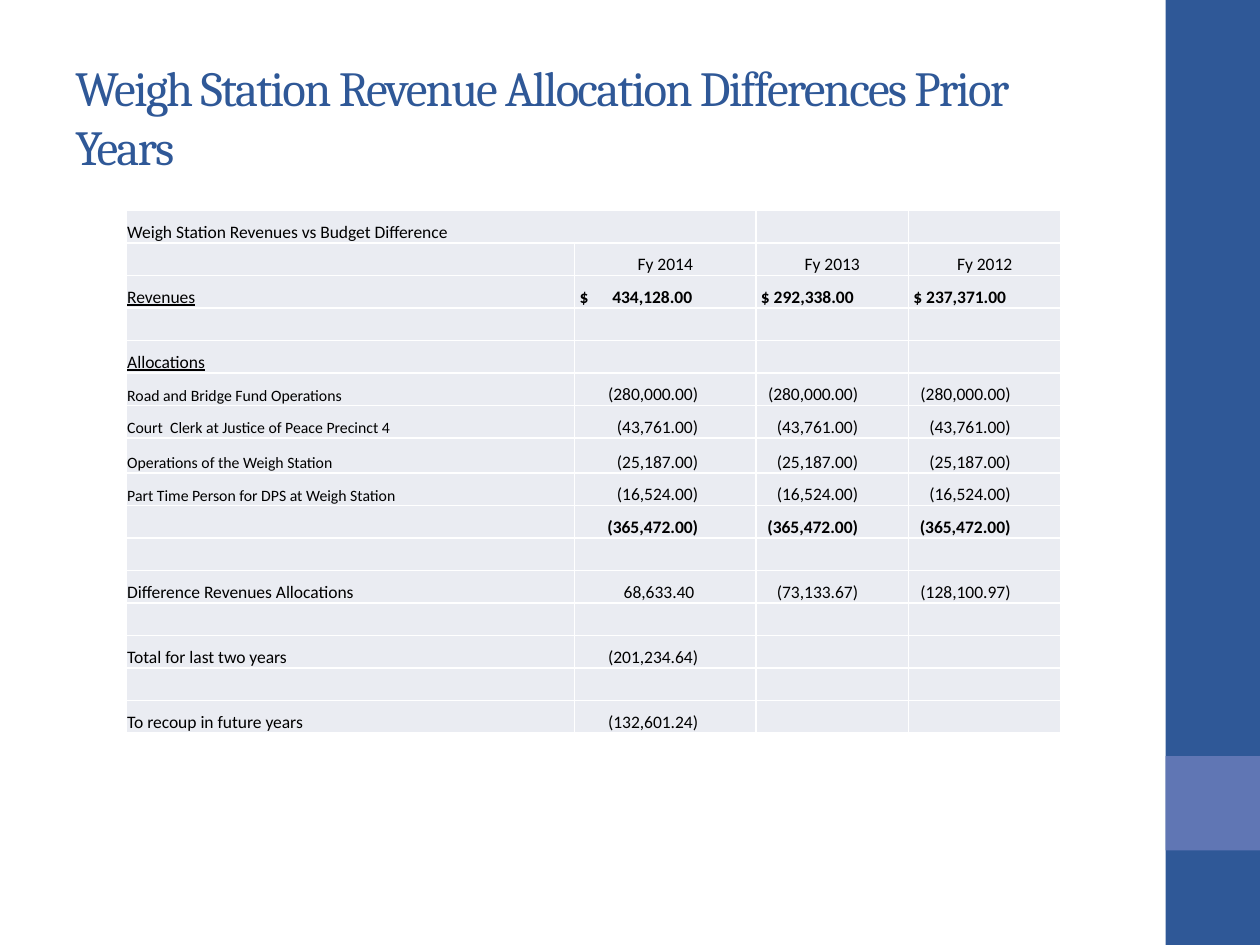
from pptx import Presentation
from pptx.dml.color import RGBColor
from pptx.enum.shapes import MSO_SHAPE
from pptx.enum.text import MSO_ANCHOR, PP_ALIGN
from pptx.oxml.ns import qn
from pptx.util import Inches, Pt
from lxml.etree import SubElement

NAVY = RGBColor(0x2F, 0x58, 0x97)
PERIWINKLE = RGBColor(0x60, 0x76, 0xB4)
PALE = RGBColor(0xEA, 0xEC, 0xF2)
BLACK = RGBColor(0, 0, 0)

TITLE = "Weigh Station Revenue Allocation Differences Prior Years"
COLUMN_WIDTHS = [3.56, 1.44, 1.21, 1.21]
AMOUNT_MARGINS = [0.01, 0.46, 0.4, 0.4]
TALL_ROW = 7
TALL_HEIGHT = 0.28
PLAIN = {"name": "Calibri", "size": Pt(10), "bold": False, "underline": False}
BOLD = {**PLAIN, "bold": True}
UNDERLINED = {**PLAIN, "underline": True}
SMALL = {**PLAIN, "size": Pt(9)}

ROWS = [
    (PLAIN, PLAIN, ["Weigh Station Revenues vs Budget Difference"]),
    (PLAIN, PLAIN, ["", "Fy 2014", "Fy 2013", "Fy 2012"]),
    (UNDERLINED, BOLD, ["Revenues", "$\t434,128.00", "$ 292,338.00", "$ 237,371.00"]),
    (PLAIN, PLAIN, []),
    (UNDERLINED, PLAIN, ["Allocations"]),
    (SMALL, PLAIN, ["Road and Bridge Fund Operations"] + ["(280,000.00)"] * 3),
    (SMALL, PLAIN, ["Court  Clerk at Justice of Peace Precinct 4"] + ["(43,761.00)"] * 3),
    (SMALL, PLAIN, ["Operations of the Weigh Station"] + ["(25,187.00)"] * 3),
    (SMALL, PLAIN, ["Part Time Person for DPS at Weigh Station"] + ["(16,524.00)"] * 3),
    (PLAIN, BOLD, [""] + ["(365,472.00)"] * 3),
    (PLAIN, PLAIN, []),
    (PLAIN, PLAIN, ["Difference Revenues Allocations", "68,633.40", "(73,133.67)", "(128,100.97)"]),
    (PLAIN, PLAIN, []),
    (PLAIN, PLAIN, ["Total for last two years", "(201,234.64)"]),
    (PLAIN, PLAIN, []),
    (PLAIN, PLAIN, ["To recoup in future years", "(132,601.24)"]),
]


def set_values(target, values):
    """Set each named attribute of the target."""
    for name, value in values.items():
        setattr(target, name, value)


def add_sidebar(slide, left, top, width, height):
    """Draw the side band with a square one width above its foot."""
    bands = [(top, height, NAVY), (top + height - 2 * width, width, PERIWINKLE)]
    for band_top, band_height, color in bands:
        shape = slide.shapes.add_shape(MSO_SHAPE.RECTANGLE, left, band_top, width, band_height)
        shape.shadow.inherit = False
        shape.fill.solid()
        shape.fill.fore_color.rgb = color
        shape.line.fill.background()


def add_title(slide, left, top, width, height):
    """Place the slide title in its box."""
    frame = slide.shapes.add_textbox(left, top, width, height).text_frame
    set_values(frame, {"word_wrap": True, "vertical_anchor": MSO_ANCHOR.MIDDLE})
    run = frame.paragraphs[0].add_run()
    run.text = TITLE
    set_values(run.font, {"name": "Cambria", "size": Pt(28)})
    run.font.color.rgb = NAVY
    run.font._element.set("spc", "-100")


def add_borders(cell):
    """Give a cell thin white borders on every side."""
    properties = cell._tc.get_or_add_tcPr()
    for side in ("a:lnL", "a:lnR", "a:lnT", "a:lnB"):
        line = SubElement(properties, qn(side), w=str(Pt(1)))
        fill = SubElement(line, qn("a:solidFill"))
        SubElement(fill, qn("a:srgbClr"), val="FFFFFF")


def place_text(cell, text, column):
    """Align the cell text by its kind: label, year, dollar total or amount."""
    paragraph = cell.text_frame.paragraphs[0]
    if text.startswith("Fy"):
        paragraph.alignment = PP_ALIGN.CENTER
    elif text.startswith("$"):
        cell.margin_left = Inches(0.04)
        tabs = SubElement(paragraph._p.get_or_add_pPr(), qn("a:tabLst"))
        SubElement(tabs, qn("a:tab"), pos=str(Inches(0.26)), algn="l")
    elif column and text:
        paragraph.alignment = PP_ALIGN.RIGHT
        parenthesis_room = 0 if text.endswith(")") else 0.03
        cell.margin_right = Inches(AMOUNT_MARGINS[column] + parenthesis_room)


def fill_cell(cell, text, column, font_values):
    """Format one cell and write its text."""
    add_borders(cell)
    cell.fill.solid()
    cell.fill.fore_color.rgb = PALE
    set_values(cell, {
        "margin_left": Inches(0.01), "margin_right": Inches(0.01),
        "margin_top": Inches(0.01), "margin_bottom": 0,
        "vertical_anchor": MSO_ANCHOR.BOTTOM,
    })
    place_text(cell, text, column)
    paragraph = cell.text_frame.paragraphs[0]
    if text:
        run = paragraph.add_run()
        run.text = text
        set_values(run.font, font_values)
        run.font.color.rgb = BLACK
    else:
        SubElement(paragraph._p, qn("a:endParaRPr"), sz="1000")


def add_revenue_table(slide, left, top, width, height):
    """Build the table of revenues and allocations by year."""
    table = slide.shapes.add_table(len(ROWS), len(COLUMN_WIDTHS), left, top, width, height).table
    set_values(table, {"first_row": False, "horz_banding": False})
    for column, column_width in zip(table.columns, COLUMN_WIDTHS):
        column.width = Inches(column_width)
    row_height = (height - Inches(TALL_HEIGHT)) // (len(ROWS) - 1)
    for index, (label_font, amount_font, texts) in enumerate(ROWS):
        table.rows[index].height = Inches(TALL_HEIGHT) if index == TALL_ROW else row_height
        padded = texts + [""] * (len(COLUMN_WIDTHS) - len(texts))
        for column, text in enumerate(padded):
            fill_cell(table.cell(index, column), text, column, amount_font if column else label_font)
    table.cell(0, 0).merge(table.cell(0, 1))


def main():
    """Build and save the slide."""
    presentation = Presentation()
    set_values(presentation, {"slide_width": Inches(10), "slide_height": Inches(7.5)})
    slide = presentation.slides.add_slide(presentation.slide_layouts[6])
    add_sidebar(slide, Inches(9.25), 0, Inches(0.75), Inches(7.5))
    add_title(slide, Inches(0.5), Inches(0.3), Inches(8.33), Inches(1.25))
    add_revenue_table(slide, Inches(1), Inches(1.67), Inches(7.42), Inches(4.15))
    presentation.save("out.pptx")


if __name__ == "__main__":
    main()
